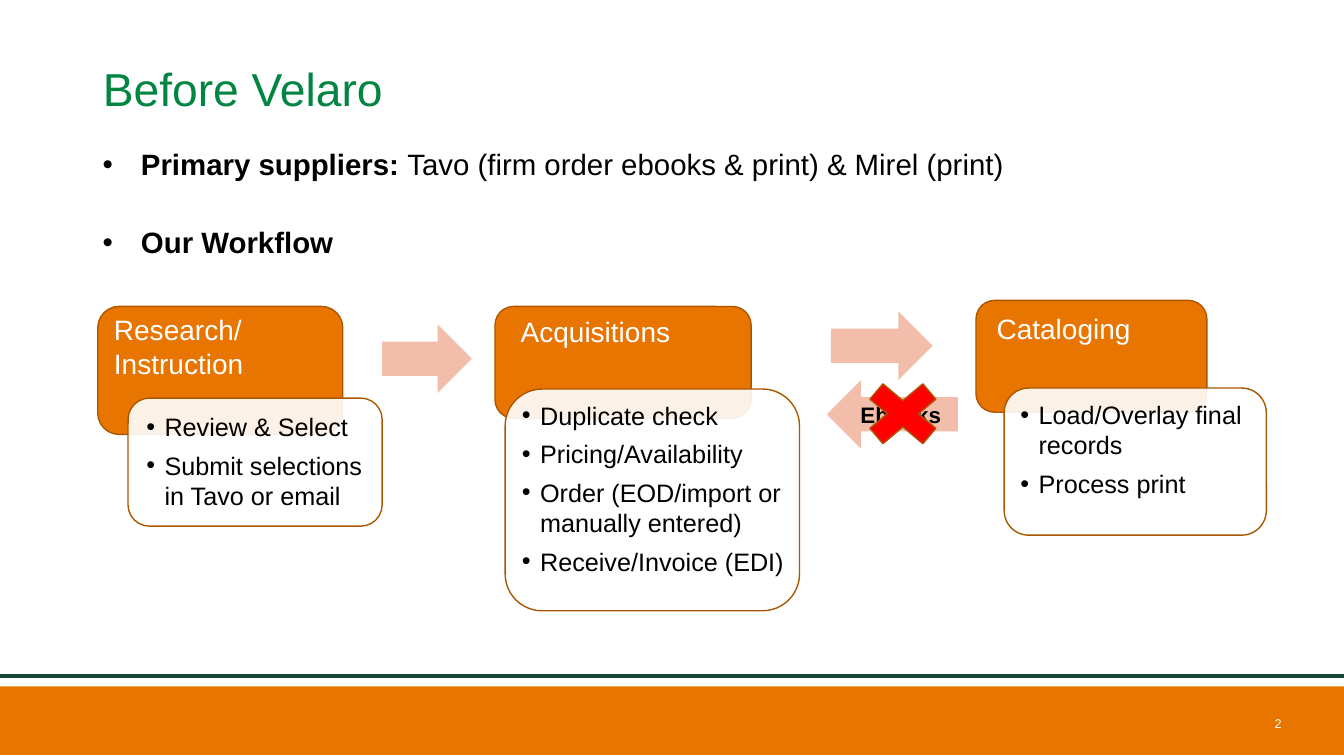
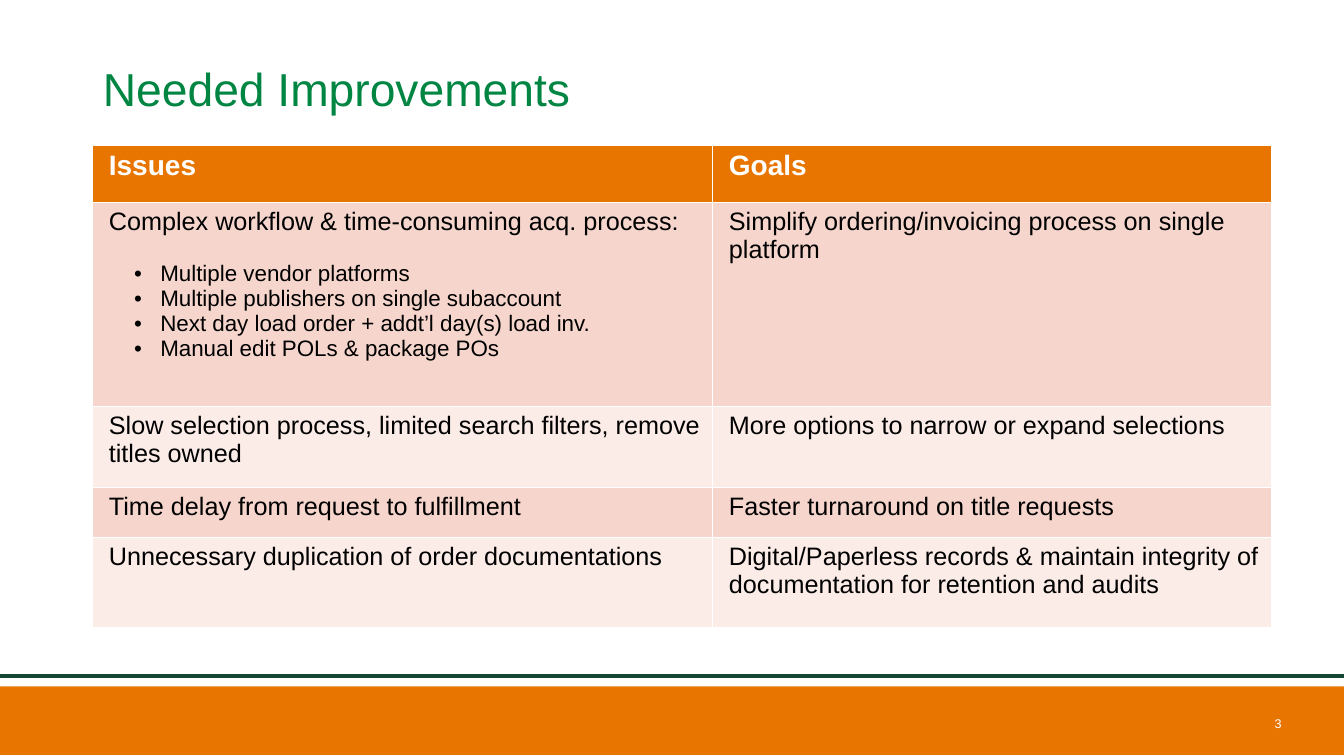
"""Build two slides on a library's ordering workflow and the changes it needs."""
from dataclasses import dataclass

from lxml.etree import SubElement as Sub
from pptx import Presentation
from pptx.dml.color import RGBColor as RGB
from pptx.enum.shapes import MSO_CONNECTOR as Link, MSO_SHAPE as Kind
from pptx.enum.text import MSO_ANCHOR as Anchor, MSO_AUTO_SIZE as Fit, PP_ALIGN as Align
from pptx.oxml.ns import qn
from pptx.util import Inches, Pt


@dataclass(frozen=True)
class Theme:
    font: str = "Arial"
    white: str = "FFFFFF"
    black: str = "000000"
    green: str = "008542"
    pine: str = "154734"
    orange: str = "E87500"
    rust: str = "AC5700"
    peach: str = "F2BDAA"
    red: str = "FF0000"
    rows: tuple = ("F6D6CC", "FBECE7")
    title: int = 33
    lead: int = 21
    head: int = 20
    text: int = 18
    small: int = 16
    page: int = 9


T = Theme()
WIDE, HIGH = 13.33, 7.5

STAGES = [
    ("Research/ Instruction", (0.97, 3.04, 2.43, 1.27), (0.1, 0),
     ["Review & Select", "Submit selections in Tavo or email"],
     (1.27, 3.95, 2.52, 1.27), (0.12, 0.07)),
    ("Acquisitions", (4.91, 3.04, 2.54, 1.11), (0.2, 0.03),
     ["Duplicate check", "Pricing/Availability",
      "Order (EOD/import or manually entered)", "Receive/Invoice (EDI)"],
     (5.01, 3.86, 2.92, 2.2), (0.06, 0)),
    ("Cataloging", (9.68, 2.98, 2.29, 1.11), (0.15, 0.06),
     ["Load/Overlay final records", "Process print"],
     (9.96, 3.85, 2.6, 1.46), (0.09, 0.04)),
]

ISSUES = [
    ("Complex workflow & time-consuming acq. process:",
     "Simplify ordering/invoicing process on single platform"),
    ("Slow selection process, limited search filters, remove titles owned",
     "More options to narrow or expand selections"),
    ("Time delay from request to fulfillment", "Faster turnaround on title requests"),
    ("Unnecessary duplication of order documentations",
     "Digital/Paperless records & maintain integrity of documentation for retention and audits"),
]
CAUSES = ["Multiple vendor platforms", "Multiple publishers on single subaccount",
          "Next day load order + addt’l day(s) load inv.", "Manual edit POLs & package POs"]


def color(code):
    """Turn a hex code into a colour."""
    return RGB.from_string(code)


def style(para, size, ink=T.black, bold=False):
    """Set the font of a paragraph."""
    font = para.font
    font.name, font.size, font.bold = T.font, Pt(size), bold
    font.color.rgb = color(ink)


def bullet(para, left, hang):
    """Give a paragraph a bullet with a hanging indent."""
    props = para._p.get_or_add_pPr()
    props.set("marL", str(Inches(left)))
    props.set("indent", str(-Inches(hang)))
    Sub(props, qn("a:buFont")).set("typeface", T.font)
    Sub(props, qn("a:buChar")).set("char", "•")


def paint(slide, kind, box, fill, line=None):
    """Add a preset shape with a flat fill."""
    shape = slide.shapes.add_shape(kind, *map(Inches, box))
    shape.shadow.inherit = False
    shape.fill.solid()
    shape.fill.fore_color.rgb = color(fill)
    if line:
        shape.line.color.rgb = color(line)
        shape.line.width = Pt(1)
    else:
        shape.line.fill.background()
    return shape


def fade(shape, share):
    """Set the opacity of a solid fill in percent."""
    tint = shape.fill._xPr.find(qn("a:solidFill"))[0]
    Sub(tint, qn("a:alpha")).set("val", str(share * 1000))


def card(slide, box, pad, fill):
    """Add a rounded card and return it with its text frame."""
    shape = paint(slide, Kind.ROUNDED_RECTANGLE, box, fill, T.rust)
    frame = shape.text_frame
    frame.word_wrap = True
    frame.vertical_anchor = Anchor.TOP
    frame.margin_left, frame.margin_top = map(Inches, pad)
    frame.margin_right = frame.margin_bottom = 0
    return shape, frame


def fill_in(frame, lines):
    """Yield one paragraph of the frame for each line."""
    for num, line in enumerate(lines):
        para = frame.add_paragraph() if num else frame.paragraphs[0]
        para.text = line
        para.alignment = Align.LEFT
        yield para


def label(slide, box):
    """Add a wrapping text box and return its frame."""
    frame = slide.shapes.add_textbox(*map(Inches, box)).text_frame
    frame.word_wrap = True
    return frame


def start(deck, title, page):
    """Add a slide with its title, footer band, rule and page number."""
    slide = deck.slides.add_slide(deck.slide_layouts[5])
    paint(slide, Kind.RECTANGLE, (0, 6.81, WIDE, 0.68), T.orange)
    rule = slide.shapes.add_connector(
        Link.STRAIGHT, *map(Inches, (0, 6.71, WIDE, 6.71)))
    rule.line.color.rgb = color(T.pine)
    rule.line.width = Pt(3)
    Sub(rule._element.spPr, qn("a:effectLst"))

    name = slide.shapes.title
    name.left, name.top, name.width, name.height = map(Inches, (0.92, 0.27, 11.5, 1.27))
    frame = name.text_frame
    frame.text = title
    frame.auto_size, frame.vertical_anchor = Fit.NONE, Anchor.MIDDLE
    para = frame.paragraphs[0]
    para.alignment, para.line_spacing = Align.LEFT, 0.9
    style(para, T.title, T.green)

    frame = label(slide, (12.42, 7.07, 0.39, 0.21))
    frame.vertical_anchor = Anchor.MIDDLE
    para = frame.paragraphs[0]
    para.text, para.alignment = str(page), Align.RIGHT
    style(para, T.page, T.white)
    return slide


def lead(slide):
    """Add the two opening points."""
    points = [("Primary suppliers: ", "Tavo (firm order ebooks & print) & Mirel (print)"),
              ("Our Workflow", "")]
    frame = label(slide, (0.92, 1.44, 11.5, 1.3))
    for num, (para, (_, rest)) in enumerate(zip(fill_in(frame, [p[0] for p in points]), points)):
        bullet(para, 0.38, 0.38)
        para.line_spacing = 0.9
        para.space_before = Pt(33 if num else 0)
        style(para, T.lead)
        para.runs[0].font.bold = True
        if rest:
            para.add_run().text = rest


def stage(slide, name, box, pad, tasks, low, inset):
    """Add one workflow stage: a header card and its task card."""
    _, frame = card(slide, box, pad, T.orange)
    for para in fill_in(frame, [name]):
        style(para, T.head, T.white)
    shape, frame = card(slide, low, inset, T.white)
    fade(shape, 90)
    for para in fill_in(frame, tasks):
        bullet(para, 0.18, 0.18)
        para.space_after = Pt(6)
        style(para, T.text)


def flow(slide):
    """Add the arrows between stages and the cross over the return path."""
    for box in ((3.79, 3.22, 0.89, 0.68), (8.24, 3.09, 1.01, 0.68)):
        paint(slide, Kind.RIGHT_ARROW, box, T.peach)
    back = paint(slide, Kind.LEFT_ARROW, (8.2, 3.77, 1.3, 0.68), T.peach)
    frame = back.text_frame
    frame.word_wrap, frame.vertical_anchor = False, Anchor.MIDDLE
    para = frame.paragraphs[0]
    para.text, para.alignment = "Ebooks", Align.CENTER
    style(para, T.small, bold=True)
    paint(slide, Kind.MATH_MULTIPLY, (8.45, 3.68, 1.01, 0.85), T.red, T.rust)


def put(cell, text, fill, size, ink=T.black, bold=False):
    """Fill a table cell with one styled paragraph."""
    cell.fill.solid()
    cell.fill.fore_color.rgb = color(fill)
    cell.margin_left = Inches(0.16)
    for para in fill_in(cell.text_frame, [text]):
        style(para, size, ink, bold)


def grid(slide):
    """Add the table of issues and goals."""
    cols, rows = (6.15, 5.54), (0.57, 2.02, 0.81, 0.49, 0.9)
    box = (0.92, 1.44, sum(cols), sum(rows))
    table = slide.shapes.add_table(len(rows), len(cols), *map(Inches, box)).table
    for col, width in zip(table.columns, cols):
        col.width = Inches(width)
    for row, height in zip(table.rows, rows):
        row.height = Inches(height)
    for col, text in enumerate(("Issues", "Goals")):
        put(table.cell(0, col), text, T.orange, T.head, T.white, True)
    for row, pair in enumerate(ISSUES):
        for col, text in enumerate(pair):
            put(table.cell(row + 1, col), text, T.rows[row % 2], T.text)
    frame = table.cell(1, 0).text_frame
    for num, cause in enumerate(CAUSES):
        para = frame.add_paragraph()
        para.text = cause
        bullet(para, 0.51, 0.26)
        para.space_before = Pt(0 if num else 18.5)
        style(para, T.small)


def main():
    """Build and save the deck."""
    deck = Presentation()
    deck.slide_width, deck.slide_height = Inches(WIDE), Inches(HIGH)
    slide = start(deck, "Before Velaro", 2)
    lead(slide)
    for item in STAGES:
        stage(slide, *item)
    flow(slide)
    grid(start(deck, "Needed Improvements", 3))
    deck.save("out.pptx")


if __name__ == "__main__":
    main()
